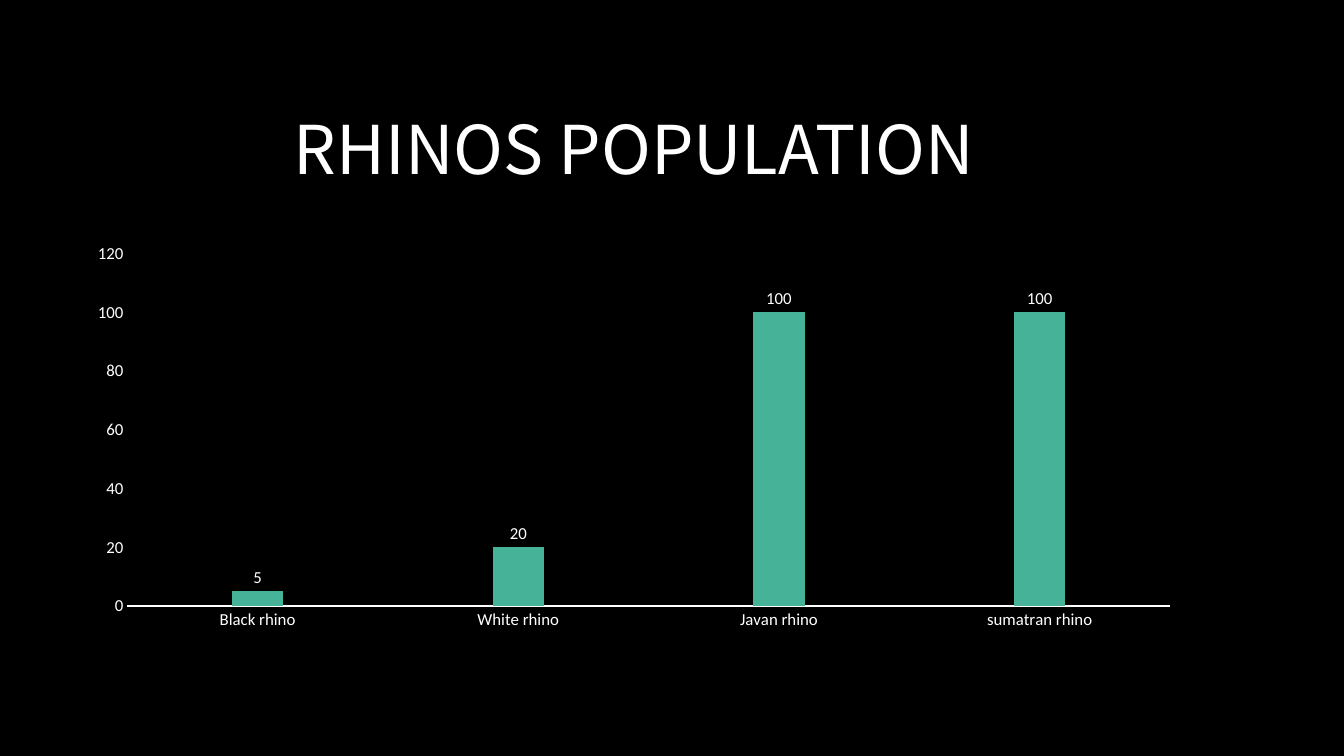
import pptx
import pptx.util
import pptx.chart.data
import pptx.dml.color
import pptx.enum.chart
import pptx.enum.dml
import pptx.enum.text

Cm, Pt = pptx.util.Cm, pptx.util.Pt

TITLE = "RHINOS POPULATION"
SPECIES = ["Black rhino", "White rhino", "Javan rhino", "sumatran rhino"]
SERIES = [
    {"name": "Series 1", "values": [None] * 4, "fore": "AC3EC1", "back": "EED8F3"},
    {"name": "Series 2", "values": [5, 20, 100, 100], "fore": "46B298", "back": None},
    {"name": "Series 3", "values": [None] * 4, "fore": "46B298", "back": "D9F0EB"},
]
WHITE, BLACK = "FFFFFF", "000000"
LEFT, WIDTH = 1.9, 28.15
TITLE_BOX = [Cm(v) for v in (LEFT, 1.7, WIDTH, 4.04)]
CHART_BOX = [Cm(v) for v in (LEFT, 5.94, WIDTH, 10.14)]


def rgb(value):
    return pptx.dml.color.RGBColor.from_string(value)


def apply(target, values):
    for key, value in values.items():
        setattr(target, key, value)


def set_font(font, name, size):
    apply(font, {"name": name, "size": Pt(size), "bold": False})
    font.color.rgb = rgb(WHITE)


def paint(fill, fore, back=None):
    if back:
        fill.patterned()
        fill.pattern = pptx.enum.dml.MSO_PATTERN.NARROW_HORIZONTAL
        fill.back_color.rgb = rgb(back)
    else:
        fill.solid()
    fill.fore_color.rgb = rgb(fore)


def add_title(s):
    tf = s.shapes.add_textbox(*TITLE_BOX).text_frame
    apply(tf, {"word_wrap": True,
               "vertical_anchor": pptx.enum.text.MSO_ANCHOR.MIDDLE})
    p = tf.paragraphs[0]
    p.alignment = pptx.enum.text.PP_ALIGN.CENTER
    r = p.add_run()
    r.text = TITLE
    set_font(r.font, "Noto Sans CJK KR", 48)


def add_population_chart(s):
    data = pptx.chart.data.CategoryChartData()
    data.categories = SPECIES
    for item in SERIES:
        data.add_series(item["name"], item["values"])
    kind = pptx.enum.chart.XL_CHART_TYPE.COLUMN_CLUSTERED
    chart = s.shapes.add_chart(kind, *CHART_BOX, data).chart
    apply(chart, {"has_legend": False, "has_title": False})
    set_font(chart.font, "Calibri", 10)

    no_tick = pptx.enum.chart.XL_TICK_MARK.NONE
    for axis in (chart.category_axis, chart.value_axis):
        apply(axis, {"has_major_gridlines": False,
                     "major_tick_mark": no_tick, "minor_tick_mark": no_tick})
        set_font(axis.tick_labels.font, "Calibri", 12)
    apply(chart.value_axis, {"minimum_scale": 0, "maximum_scale": 120, "major_unit": 20})
    chart.value_axis.format.line.fill.background()
    line = chart.category_axis.format.line
    line.width = Pt(1.5)
    line.color.rgb = rgb(WHITE)

    plot = chart.plots[0]
    apply(plot, {"gap_width": 164, "overlap": -22, "vary_by_categories": False})
    for series, item in zip(plot.series, SERIES):
        paint(series.format.fill, item["fore"], item["back"])
        labels = series.data_labels
        apply(labels, {"show_value": True,
                       "position": pptx.enum.chart.XL_LABEL_POSITION.OUTSIDE_END})
        set_font(labels.font, "Calibri", 12)


def main():
    """Build the rhino population slide and save it."""
    prs = pptx.Presentation()
    apply(prs, {"slide_width": Cm(33.87), "slide_height": Cm(19.05)})
    s = prs.slides.add_slide(prs.slide_layouts[6])
    paint(s.background.fill, BLACK)
    add_title(s)
    add_population_chart(s)
    prs.save("out.pptx")


if __name__ == "__main__":
    main()
